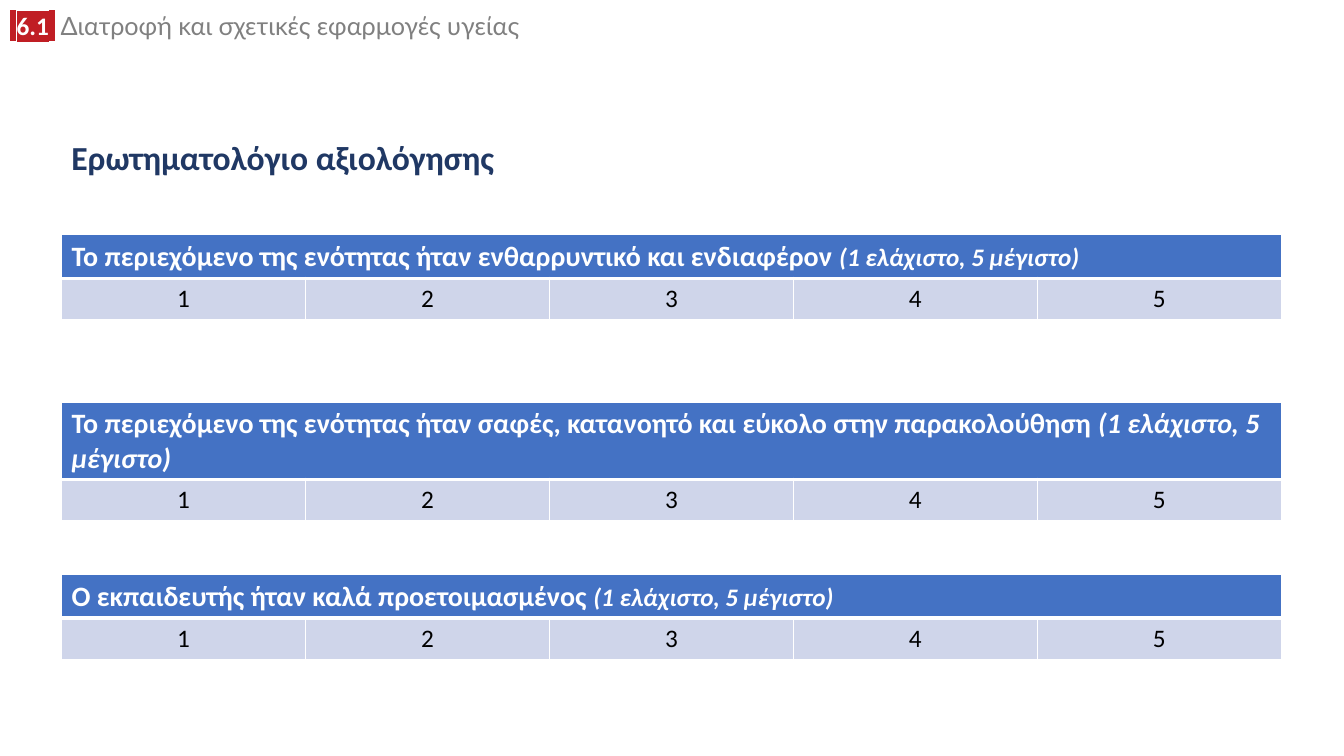
from dataclasses import dataclass

from lxml.etree import SubElement
from pptx import Presentation
from pptx.dml.color import RGBColor
from pptx.enum.text import MSO_ANCHOR, PP_ALIGN
from pptx.oxml.ns import qn
from pptx.util import Inches, Pt


@dataclass(frozen=True)
class Theme:
    white: str = "FFFFFF"
    black: str = "000000"
    red: str = "C01E24"
    grey: str = "808080"
    navy: str = "203864"
    blue: str = "4472C4"
    pale: str = "CFD5EA"
    body_font: str = "Calibri"
    label_font: str = "Lato"
    title_size: int = 24
    question_size: int = 20
    small_size: int = 18
    thin: int = 1
    thick: int = 3


# Grid: five answer columns inside the margin, 75 rows down the slide
MARGIN, COLUMN, ROW = 0.61, 2.42, 0.1
ANSWERS = ("1", "2", "3", "4", "5")
ANSWER_ROWS = 4.1


def across(columns):
    return Inches(columns * COLUMN)


def down(rows):
    return Inches(rows * ROW)


class SlideBuilder:
    def __init__(self, slide, theme):
        self.slide = slide
        self.theme = theme

    def run(self, paragraph, words, size, color, font=None, bold=False,
            italic=False, highlight=None):
        run = paragraph.add_run()
        run.text = words
        run.font.size = Pt(size)
        run.font.bold = bold
        run.font.italic = italic
        run.font.color.rgb = RGBColor.from_string(color)
        if highlight:
            marker = SubElement(run.font._element, qn("a:highlight"))
            SubElement(marker, qn("a:srgbClr"), val=highlight)
        run.font.name = font or self.theme.body_font

    def text_line(self, column, row, columns, rows, spacing, anchor):
        box = self.slide.shapes.add_textbox(
            Inches(MARGIN) + across(column), down(row), across(columns), down(rows))
        frame = box.text_frame
        frame.word_wrap = True
        frame.vertical_anchor = anchor
        paragraph = frame.paragraphs[0]
        paragraph.line_spacing = spacing
        return paragraph

    def style_cell(self, cell, fill, top, bottom):
        thin = self.theme.thin
        properties = cell._tc.get_or_add_tcPr()
        for side, width in (("L", thin), ("R", thin), ("T", top), ("B", bottom)):
            edge = SubElement(properties, qn(f"a:ln{side}"), w=str(Pt(width)))
            paint = SubElement(edge, qn("a:solidFill"))
            SubElement(paint, qn("a:srgbClr"), val=self.theme.white)
        cell.fill.solid()
        cell.fill.fore_color.rgb = RGBColor.from_string(fill)

    def rating_table(self, row, question, scale_size):
        t = self.theme
        count = len(ANSWERS)
        table = self.slide.shapes.add_table(
            2, count, Inches(MARGIN), down(row), across(count),
            down(2 * ANSWER_ROWS)).table
        for index, answer in enumerate(ANSWERS):
            table.columns[index].width = across(1)
            self.style_cell(table.cell(0, index), t.blue, t.thin, t.thick)
            choice = table.cell(1, index)
            self.style_cell(choice, t.pale, t.thick, t.thin)
            paragraph = choice.text_frame.paragraphs[0]
            paragraph.alignment = PP_ALIGN.CENTER
            self.run(paragraph, answer, t.small_size, t.black)
        # Question across all answers
        heading = table.cell(0, 0)
        heading.merge(table.cell(0, count - 1))
        paragraph = heading.text_frame.paragraphs[0]
        self.run(paragraph, question + " ", t.question_size, t.white, bold=True)
        self.run(paragraph, "(1 ελάχιστο, 5 μέγιστο)", scale_size, t.white,
                 bold=True, italic=True)


def main():
    theme = Theme()
    deck = Presentation()
    deck.slide_width, deck.slide_height = Inches(13.33), Inches(7.5)
    builder = SlideBuilder(deck.slides.add_slide(deck.slide_layouts[6]), theme)

    # Unit number and name
    unit = builder.text_line(-0.25, 1.1, 3.93, 3.5, 0.8, MSO_ANCHOR.TOP)
    for words, font in ((" ", theme.label_font), ("6.1", theme.body_font),
                        (" ", theme.label_font)):
        builder.run(unit, words, theme.small_size, theme.white, font, bold=True,
                    highlight=theme.red)
    builder.run(unit, " Διατροφή και σχετικές εφαρμογές υγείας",
                theme.small_size, theme.grey, theme.label_font)

    # Title
    title = builder.text_line(0, 11.8, 5, 8, 0.9, MSO_ANCHOR.MIDDLE)
    builder.run(title, "Ερωτηματολόγιο αξιολόγησης", theme.title_size,
                theme.navy, bold=True)

    # Questions with their ratings
    questions = (
        (23.3, "Το περιεχόμενο της ενότητας ήταν ενθαρρυντικό και ενδιαφέρον",
         theme.small_size),
        (39.9, "Το περιεχόμενο της ενότητας ήταν σαφές, κατανοητό και εύκολο "
         "στην παρακολούθηση", theme.question_size),
        (57, "Ο εκπαιδευτής ήταν καλά προετοιμασμένος", theme.small_size),
    )
    for row, question, scale_size in questions:
        builder.rating_table(row, question, scale_size)

    deck.save("out.pptx")


if __name__ == "__main__":
    main()
